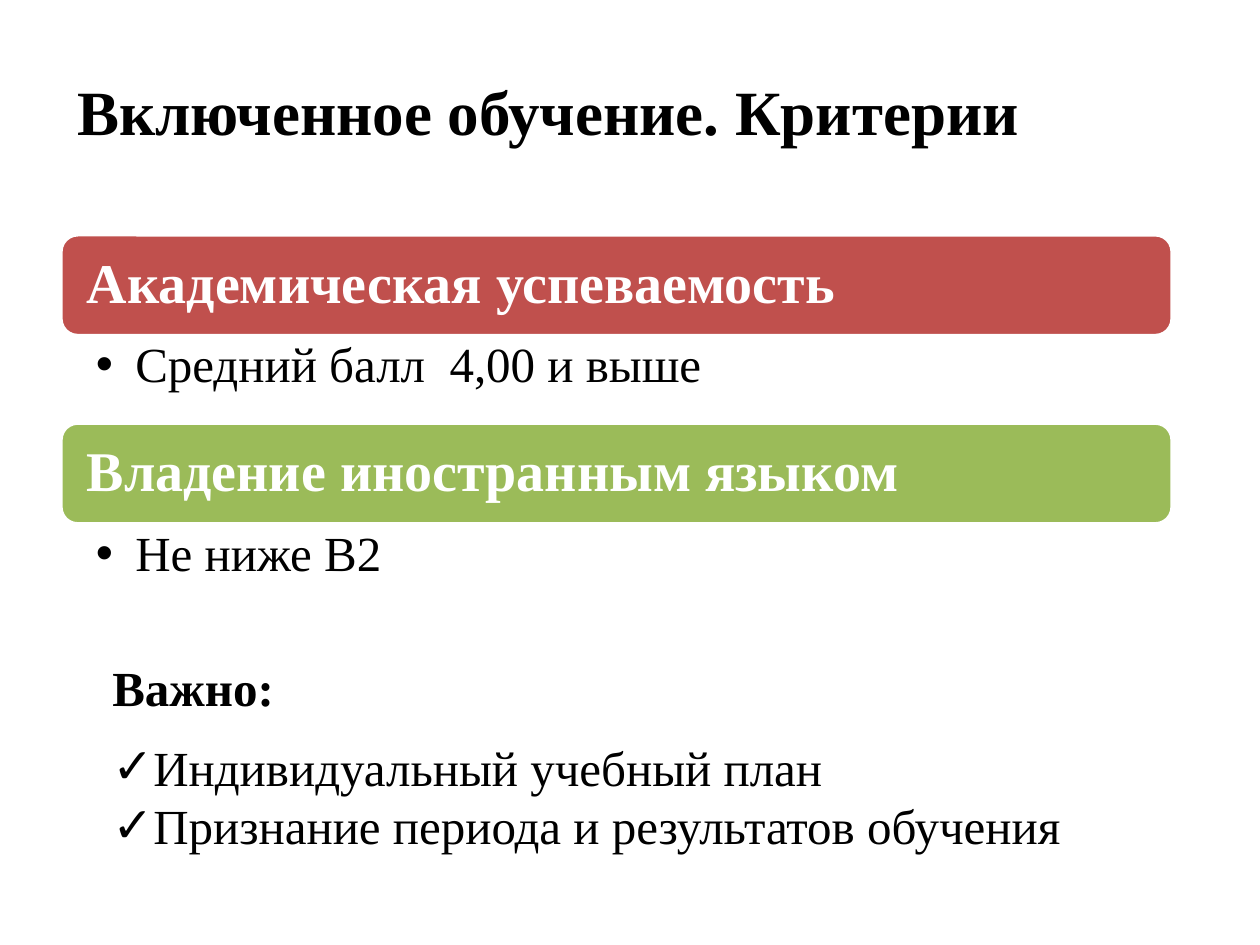
from lxml import etree
from pptx import Presentation
from pptx.dml.color import RGBColor
from pptx.enum.shapes import MSO_SHAPE
from pptx.enum.text import MSO_ANCHOR, MSO_AUTO_SIZE, PP_ALIGN
from pptx.oxml.ns import qn
from pptx.util import Pt

ROUNDED = MSO_SHAPE.ROUNDED_RECTANGLE
TOP, MIDDLE = MSO_ANCHOR.TOP, MSO_ANCHOR.MIDDLE
NO_AUTOFIT = MSO_AUTO_SIZE.NONE
LEFT = PP_ALIGN.LEFT
FONT = "Times New Roman"
COLORS = {"text": "000000", "white": "FFFFFF", "red": "C0504D", "green": "9BBB59"}
CRITERIA = [
    ("Академическая успеваемость", "Средний балл  4,00 и выше", "red"),
    ("Владение иностранным языком", "Не ниже B2", "green"),
]
NOTES = ["Индивидуальный учебный план", "Признание периода и результатов обучения"]
BANNER_HEIGHT = 57.6
CRITERION_PITCH = 107.6


def color(name):
    """Return the named palette colour."""
    return RGBColor.from_string(COLORS[name])


def place(shape, box):
    """Move a shape to a box of left, top, width and height in points."""
    shape.left, shape.top, shape.width, shape.height = map(Pt, box)


def set_frame(frame, anchor, insets=(7.2, 3.6, 7.2, 3.6)):
    """Set wrapping, anchor and insets of a text frame."""
    frame.word_wrap = True
    frame.auto_size = NO_AUTOFIT
    frame.vertical_anchor = anchor
    (frame.margin_left, frame.margin_top,
     frame.margin_right, frame.margin_bottom) = map(Pt, insets)


def write(paragraph, text, size, bold=False, color_name="text", bullet=None,
          line_spacing=1.0, space_after=0):
    """Fill a paragraph with formatted text and an optional bullet."""
    paragraph.text = text
    paragraph.alignment = LEFT
    paragraph.line_spacing = line_spacing
    paragraph.space_before = Pt(0)
    paragraph.space_after = Pt(space_after)
    properties = paragraph._p.get_or_add_pPr()
    indent = Pt(22.5) if bullet else 0
    properties.set("marL", str(indent))
    properties.set("indent", str(-indent))
    if bullet:
        etree.SubElement(properties, qn("a:buFont")).set("typeface", "Arial")
        etree.SubElement(properties, qn("a:buChar")).set("char", bullet)
    else:
        etree.SubElement(properties, qn("a:buNone"))
    font = paragraph.font
    font.name, font.size, font.bold = FONT, Pt(size), bold
    font.color.rgb = color(color_name)


def add_title(slide, box):
    """Place the slide title in its box."""
    title = slide.shapes.title
    place(title, box)
    set_frame(title.text_frame, MIDDLE)
    write(title.text_frame.paragraphs[0], "Включенное обучение. Критерии", 36, bold=True)


def add_criterion(slide, box, heading, detail, fill):
    """Place a coloured banner with its bulleted requirement below."""
    left, top, width, height = box
    banner = slide.shapes.add_shape(ROUNDED, *map(Pt, (left, top, width, BANNER_HEIGHT)))
    banner.shadow.inherit = False
    banner.fill.solid()
    banner.fill.fore_color.rgb = color(fill)
    banner.line.color.rgb = color("white")
    banner.line.width = Pt(2)
    set_frame(banner.text_frame, MIDDLE, (12, 9, 12, 9))
    write(banner.text_frame.paragraphs[0], heading, 32, bold=True,
          color_name="white", line_spacing=0.9)
    requirement = slide.shapes.add_textbox(
        *map(Pt, (left, top + BANNER_HEIGHT, width, height - BANNER_HEIGHT)))
    set_frame(requirement.text_frame, TOP, (20, 2.8, 16, 2.8))
    write(requirement.text_frame.paragraphs[0], detail, 28, bullet="•", line_spacing=0.9)


def add_notes(slide, box):
    """Place the list of important points in the body placeholder."""
    body = slide.placeholders[1]
    place(body, box)
    frame = body.text_frame
    set_frame(frame, TOP)
    write(frame.paragraphs[0], "Важно:", 28, bold=True, space_after=12)
    for note in NOTES:
        write(frame.add_paragraph(), note, 28, bullet="✓")


def main():
    """Build and save the presentation."""
    presentation = Presentation()
    presentation.slide_width, presentation.slide_height = Pt(720), Pt(540)
    slide = presentation.slides.add_slide(presentation.slide_layouts[1])
    add_title(slide, (37, 15, 652, 96.5))
    for index, criterion in enumerate(CRITERIA):
        add_criterion(slide, (34.8, 134.2 + index * CRITERION_PITCH, 635, CRITERION_PITCH),
                      *criterion)
    add_notes(slide, (57, 372, 612, 121))
    presentation.save("out.pptx")


if __name__ == "__main__":
    main()
